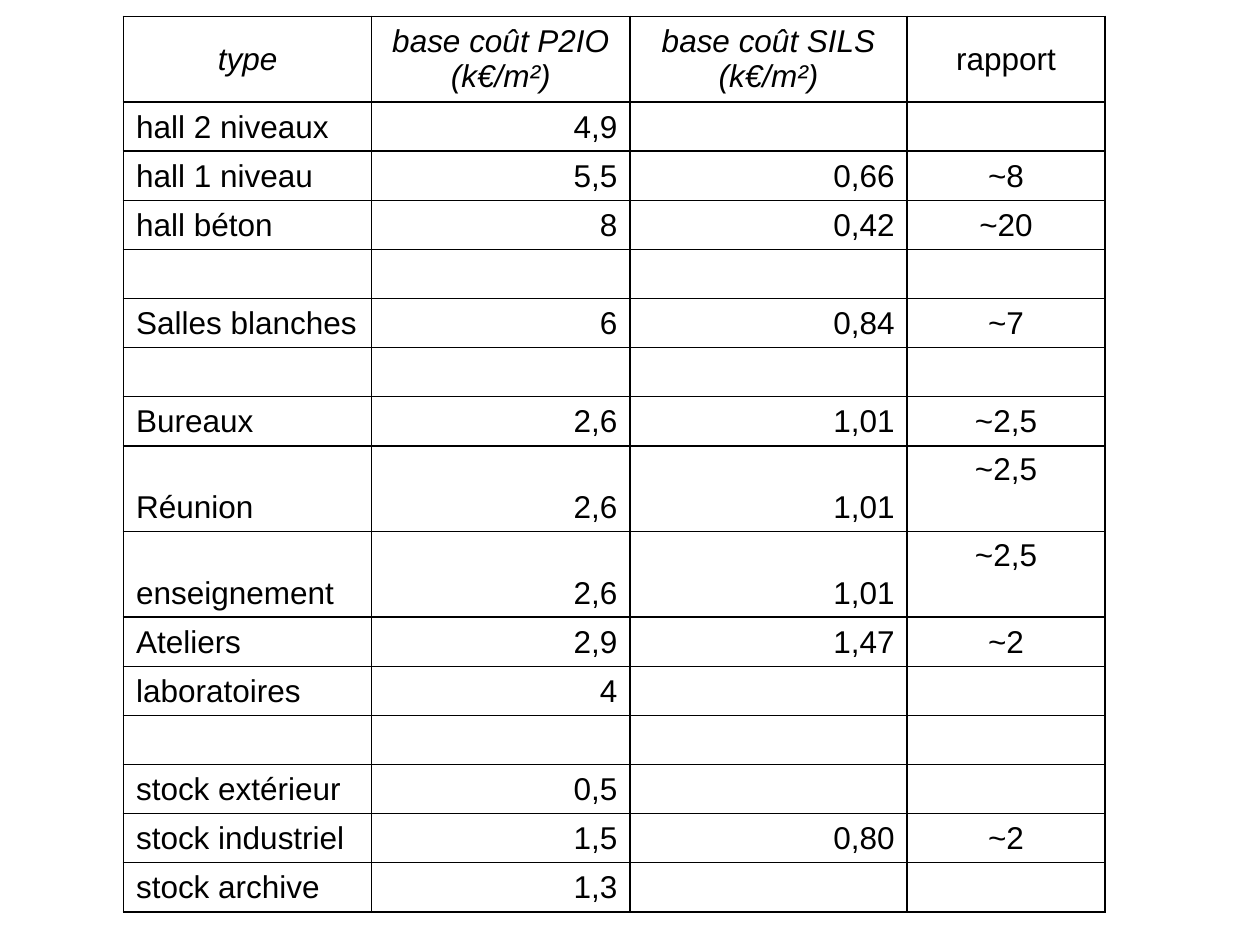
"""Build a slide with a table of construction base costs by room type."""
import pptx
import pptx.dml.color
import pptx.enum.text
import pptx.oxml
import pptx.oxml.ns
import pptx.util

ALIGN = pptx.enum.text.PP_ALIGN
ANCHOR = pptx.enum.text.MSO_ANCHOR

HEADINGS = ("type", "base coût P2IO (k€/m²)", "base coût SILS (k€/m²)", "rapport")
COSTS = (
    ("hall 2 niveaux", "4,9", "", ""),
    ("hall 1 niveau", "5,5", "0,66", "~8"),
    ("hall béton", "8", "0,42", "~20"),
    ("", "", "", ""),
    ("Salles blanches", "6", "0,84", "~7"),
    ("", "", "", ""),
    ("Bureaux", "2,6", "1,01", "~2,5"),
    ("Réunion", "2,6", "1,01", "~2,5"),
    ("enseignement", "2,6", "1,01", "~2,5"),
    ("Ateliers", "2,9", "1,47", "~2"),
    ("laboratoires", "4", "", ""),
    ("", "", "", ""),
    ("stock extérieur", "0,5", "", ""),
    ("stock industriel", "1,5", "0,80", "~2"),
    ("stock archive", "1,3", "", ""),
)
COLUMN_WIDTHS = (19.7, 20.5, 22, 15.7)
COLUMN_ALIGNS = (ALIGN.LEFT, ALIGN.RIGHT, ALIGN.RIGHT, ALIGN.CENTER)
SINGLE, DOUBLE = 3.9, 6.8
TALL_ROOMS = ("Réunion", "enseignement")


def colour(value):
    """Return the colour for a hex string."""
    return pptx.dml.color.RGBColor.from_string(value)


class Sheet:
    """Style and current slide, measured on a grid of 100 columns by 75 rows."""

    font, size, ink = "Arial", 18, "000000"

    def __init__(self, deck):
        """Add a blank slide and derive the grid unit from the deck."""
        self.slide = deck.slides.add_slide(deck.slide_layouts[6])
        self.unit = deck.slide_width / 100

    def grid(self, steps):
        """Convert grid steps to a length."""
        return pptx.util.Emu(round(steps * self.unit))

    def table(self, left, top, widths, heights):
        """Add an unstyled table with the given columns and rows."""
        frame = self.slide.shapes.add_table(
            len(heights), len(widths), self.grid(left), self.grid(top),
            self.grid(sum(widths)), self.grid(sum(heights)))
        table = frame.table
        table.first_row = table.horz_banding = False
        for column, width in zip(table.columns, widths):
            column.width = self.grid(width)
        for row, height in zip(table.rows, heights):
            row.height = self.grid(height)
        return table

    def cell(self, cell, text, align, anchor, italic=False):
        """Border a cell and write its text."""
        self.border(cell)
        cell.fill.background()
        cell.vertical_anchor = anchor
        cell.text = text
        para = cell.text_frame.paragraphs[0]
        para.alignment = align
        para.font.name = self.font
        para.font.size = pptx.util.Pt(self.size)
        para.font.italic = italic
        para.font.color.rgb = colour(self.ink)

    def border(self, cell):
        """Draw a one-point line on all four sides of a cell."""
        properties = cell._tc.get_or_add_tcPr()
        for side in "LRTB":
            properties.append(pptx.oxml.parse_xml(
                f'<a:ln{side} {pptx.oxml.ns.nsdecls("a")} w="{pptx.util.Pt(1)}">'
                f'<a:solidFill><a:srgbClr val="{self.ink}"/></a:solidFill>'
                f'</a:ln{side}>'))


def main():
    """Build the cost table and save the deck."""
    deck = pptx.Presentation()
    deck.slide_width = pptx.util.Inches(10)
    deck.slide_height = pptx.util.Inches(7.5)
    sheet = Sheet(deck)

    heights = [DOUBLE] + [DOUBLE if row[0] in TALL_ROOMS else SINGLE for row in COSTS]
    table = sheet.table(9.8, 1.3, COLUMN_WIDTHS, heights)
    for index, heading in enumerate(HEADINGS):
        sheet.cell(table.cell(0, index), heading, ALIGN.CENTER, ANCHOR.MIDDLE,
                   italic=heading != "rapport")
    for number, row in enumerate(COSTS, start=1):
        for index, (text, align) in enumerate(zip(row, COLUMN_ALIGNS)):
            raised = row[0] in TALL_ROOMS and align == ALIGN.CENTER
            sheet.cell(table.cell(number, index), text, align,
                       ANCHOR.TOP if raised else ANCHOR.BOTTOM)
    deck.save("out.pptx")


if __name__ == "__main__":
    main()
